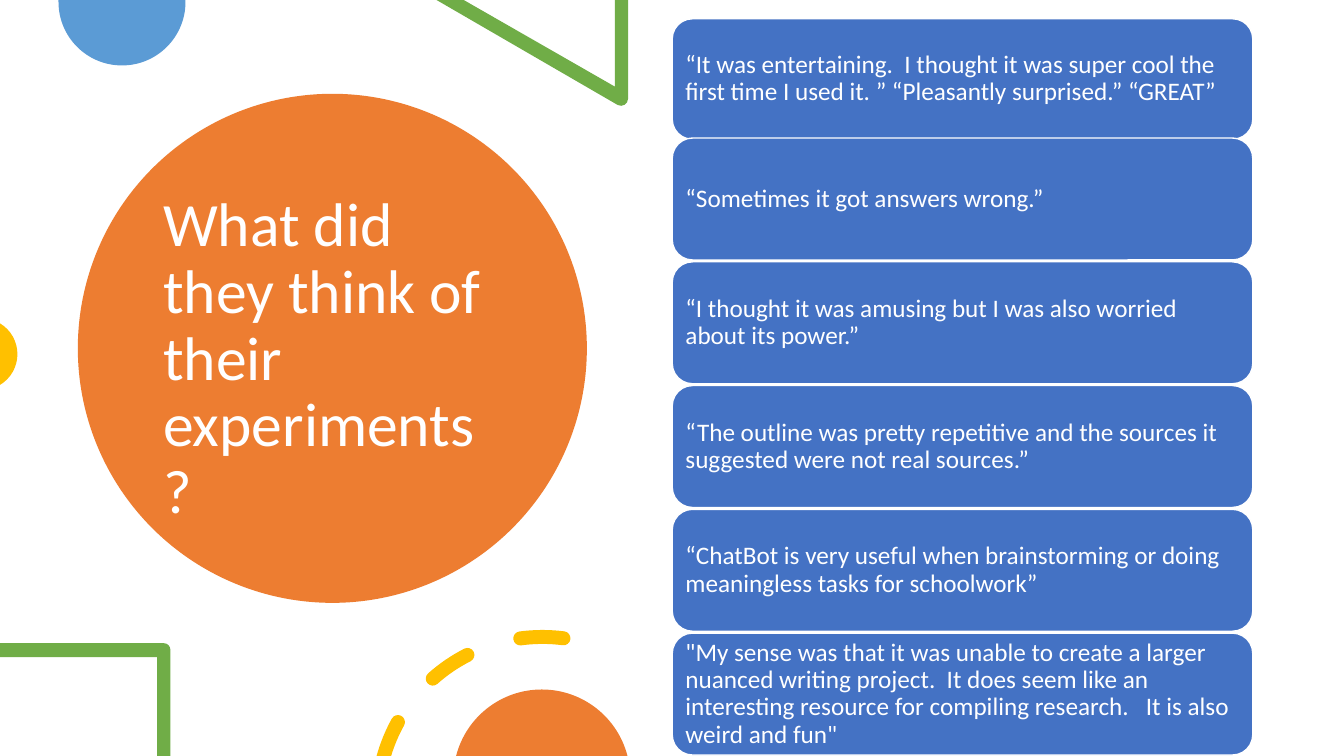
"""Build a slide of opinions about writing experiments beside a decorated title."""
import math
from dataclasses import dataclass

import lxml.etree
import pptx
import pptx.dml.color
import pptx.enum.shapes
import pptx.enum.text
import pptx.oxml.ns
import pptx.util

Pt = pptx.util.Pt
qn = pptx.oxml.ns.qn
SHAPE = pptx.enum.shapes.MSO_SHAPE

ORANGE, BLUE, SKY = "ED7D31", "4472C4", "5B9BD5"
GREEN, YELLOW, WHITE = "70AD47", "FFC000", "FFFFFF"
BOTTOM = 540

Contour = list[tuple[float, ...]]


@dataclass
class Ornament:
    color: str
    contours: list[Contour]


@dataclass
class Card:
    top: float
    height: float
    text: str


def set_fill(sp, fill: str, line: str | None = None) -> None:
    sp.shadow.inherit = False
    sp.fill.solid()
    sp.fill.fore_color.rgb = pptx.dml.color.RGBColor.from_string(fill)
    if line:
        sp.line.color.rgb = pptx.dml.color.RGBColor.from_string(line)
        sp.line.width = Pt(1)
    else:
        sp.line.fill.background()


def write(sp, text: str, *, size: float, inset: tuple[float, float]) -> None:
    tf = sp.text_frame
    tf.word_wrap = True
    tf.auto_size = pptx.enum.text.MSO_AUTO_SIZE.NONE
    tf.vertical_anchor = pptx.enum.text.MSO_ANCHOR.MIDDLE
    tf.margin_left = tf.margin_right = Pt(inset[0])
    tf.margin_top = tf.margin_bottom = Pt(inset[1])
    p = tf.paragraphs[0]
    p.alignment = pptx.enum.text.PP_ALIGN.LEFT
    p.line_spacing = 0.9
    r = p.add_run()
    r.text = text
    r.font.name = "Calibri"
    r.font.size = Pt(size)
    r.font.color.rgb = pptx.dml.color.RGBColor.from_string(WHITE)


def polar(cx: float, cy: float, radius: float, degrees: float) -> tuple[float, float]:
    a = math.radians(degrees)
    return cx + radius * math.cos(a), cy + radius * math.sin(a)


def arc(cx: float, cy: float, radius: float, start: float, end: float) -> Contour:
    """Return a start point followed by Bezier segments of at most a quarter turn."""
    steps = math.ceil(abs(end - start) / 90)
    sweep = (end - start) / steps
    pull = 4 / 3 * math.tan(math.radians(sweep) / 4) * radius
    contour: Contour = [polar(cx, cy, radius, start)]
    for i in range(steps):
        a, b = start + sweep * i, start + sweep * (i + 1)
        first = polar(*polar(cx, cy, radius, a), pull, a + 90)
        second = polar(*polar(cx, cy, radius, b), pull, b - 90)
        contour.append(first + second + polar(cx, cy, radius, b))
    return contour


def dash(start: float, end: float, clipped: bool = False) -> Contour:
    cx, cy, radius, half = 387.5, 573, 118, 5
    inner, outer = radius - half, radius + half
    inner_start = outer_start = start
    if clipped:
        inner_start, outer_start = (
            180 + math.degrees(math.asin((cy - BOTTOM) / edge)) for edge in (inner, outer)
        )
    contour = arc(cx, cy, outer, outer_start, end)
    contour += arc(*polar(cx, cy, radius, end), half, end, end + 180)[1:]
    contour += arc(cx, cy, inner, end, inner_start)[1:]
    if not clipped:
        contour += arc(*polar(cx, cy, radius, start), half, start + 180, start + 360)[1:]
    return contour


def draw_ornament(s, ornament: Ornament) -> None:
    ends = [[(Pt(n[-2]), Pt(n[-1])) for n in contour] for contour in ornament.contours]
    builder = s.shapes.build_freeform(*ends[0][0])
    for i, points in enumerate(ends):
        if i:
            builder.move_to(*points[0])
        builder.add_line_segments(points[1:], close=True)
    sp = builder.convert_to_shape()
    set_fill(sp, ornament.color)
    segments = [n for contour in ornament.contours for n in contour[1:]]
    lines = [e for e in sp.element.iter(qn("a:lnTo"))]
    closing = iter(segments)
    for line in lines:
        node = next(closing)
        if len(node) == 2:
            continue
        line.tag = qn("a:cubicBezTo")
        for i, (x, y) in enumerate((node[:2], node[2:4])):
            pt = lxml.etree.Element(qn("a:pt"), x=str(Pt(x) - sp.left), y=str(Pt(y) - sp.top))
            line.insert(i, pt)


def draw_card(s, card: Card) -> None:
    sp = s.shapes.add_shape(
        SHAPE.ROUNDED_RECTANGLE, Pt(480.2), Pt(card.top), Pt(414.7), Pt(card.height)
    )
    set_fill(sp, BLUE, WHITE)
    write(sp, card.text, size=18, inset=(5.2, 5))


def draw_title(s, text: str) -> None:
    sp = s.shapes.add_shape(SHAPE.OVAL, Pt(55.6), Pt(67), Pt(363.6), Pt(363.6))
    set_fill(sp, ORANGE)
    title = s.shapes.title
    title.left, title.top, title.width, title.height = Pt(109.4), Pt(97), Pt(254.9), Pt(320.4)
    write(title, text, size=44, inset=(7.2, 3.6))
    title.element.addprevious(sp.element)


QUOTES = [
    "“It was entertaining.  I thought it was super cool the first time I used it. ” "
    "“Pleasantly surprised.” “GREAT”",
    "“Sometimes it got answers wrong.”",
    "“I thought it was amusing but I was also worried about its power.”",
    "“The outline was pretty repetitive and the sources it suggested were not real sources.”",
    "“ChatBot is very useful when brainstorming or doing meaningless tasks for schoolwork”",
    '"My sense was that it was unable to create a larger nuanced writing project.  '
    "It does seem like an interesting resource for compiling research.   "
    'It is also weird and fun"',
]
CARDS = [Card(13.4, 86.1, QUOTES[0])] + [
    Card(98.6 + 88.4 * i, 87.1, quote) for i, quote in enumerate(QUOTES[1:])
]

TRIANGLE = [(448.6, 0), (439.2, 0), (439.2, 61.9), (331.2, 0), (311.8, 0)]
TOP_ORNAMENTS = [
    Ornament(SKY, [[(132.5, 0), (41.8, 0)] + arc(87.15, 1.4, 45.35, 180, 0)]),
    Ornament(GREEN, [TRIANGLE + arc(443.6, 70.6, 5, 118, 0)]),
    Ornament(YELLOW, [arc(-13.1, 253, 25.6, -59, 59)]),
]
FRAME = [(121.7, BOTTOM), (112.3, BOTTOM), (112.3, 469.4), (0, 469.4), (0, 459.4)]
BOTTOM_ORNAMENTS = [
    Ornament(GREEN, [arc(117, 464.1, 4.7, 270, 360) + FRAME]),
    Ornament(YELLOW, [dash(196, 209, clipped=True), dash(228.4, 243), dash(262.3, 277.3)]),
    Ornament(ORANGE, [arc(387, 555.7, 63.2, 194.4, 345.6)]),
]


def main() -> None:
    prs = pptx.Presentation()
    prs.slide_width, prs.slide_height = Pt(960), Pt(BOTTOM)
    s = prs.slides.add_slide(prs.slide_layouts[5])
    draw_title(s, "What did they think of their experiments?")
    for ornament in TOP_ORNAMENTS:
        draw_ornament(s, ornament)
    for card in CARDS:
        draw_card(s, card)
    for ornament in BOTTOM_ORNAMENTS:
        draw_ornament(s, ornament)
    prs.save("out.pptx")


if __name__ == "__main__":
    main()
